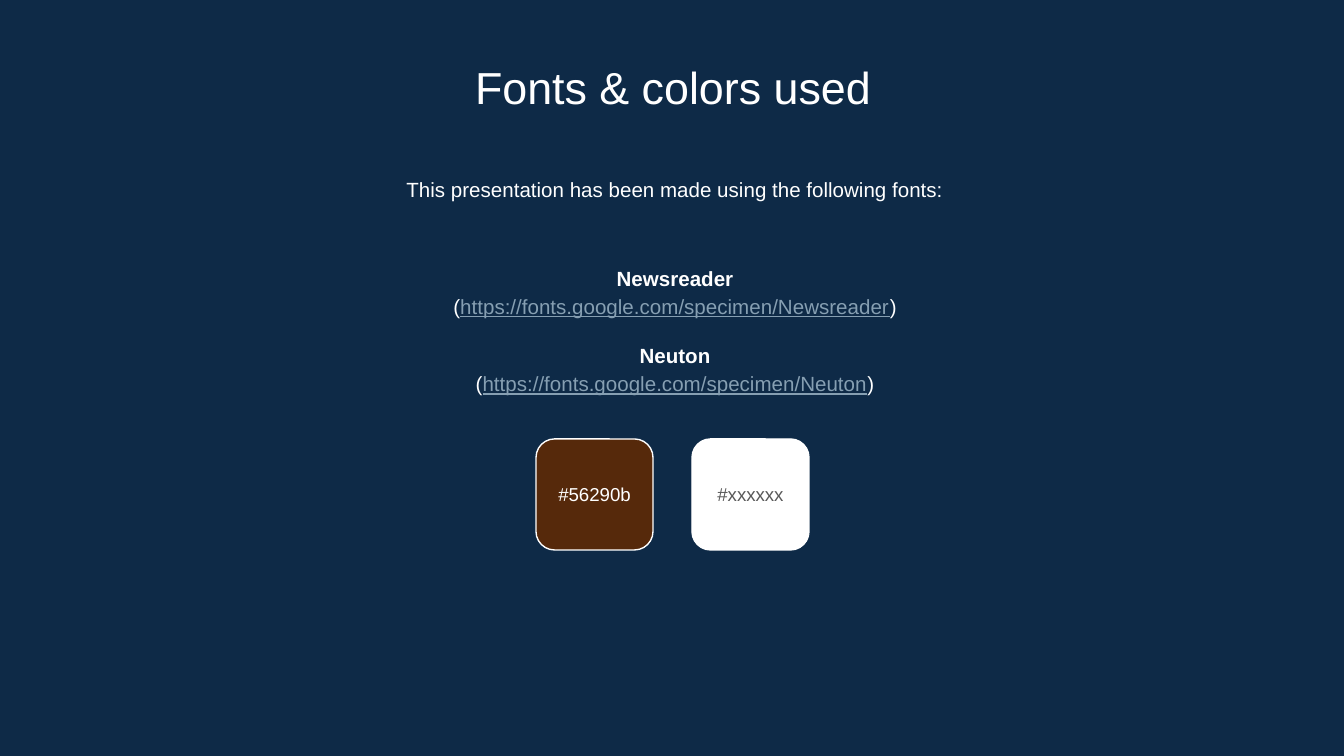
from typing import NamedTuple

from pptx import Presentation
from pptx.dml.color import RGBColor
from pptx.enum.shapes import MSO_SHAPE
from pptx.enum.text import MSO_ANCHOR, PP_ALIGN
from pptx.util import Emu, Pt

EMU_PER_PX = 914400 / 134.4
FONT = "Arial"
NAVY, WHITE, LINK, GREY, BROWN = "0E2A47", "FFFFFF", "869FB2", "595959", "56290B"


class Box(NamedTuple):
    left: int
    top: int
    width: int
    height: int


class Typeface(NamedTuple):
    name: str
    url: str


class Swatch(NamedTuple):
    label: str
    fill: str
    text_color: str


TITLE_BOX = Box(155, 47, 1036, 71)
INTRO_BOX = Box(157, 160, 1036, 65)
TYPEFACES_BOX = Box(157, 237, 1036, 184)
FIRST_SWATCH = Box(536, 439, 117, 111)
SWATCH_PITCH = 156
INSET = 13

TYPEFACES = [
    Typeface("Newsreader", "https://fonts.google.com/specimen/Newsreader"),
    Typeface("Neuton", "https://fonts.google.com/specimen/Neuton"),
]
SWATCHES = [Swatch("#56290b", BROWN, WHITE), Swatch("#xxxxxx", WHITE, GREY)]


def px(length: int) -> Emu:
    return Emu(round(length * EMU_PER_PX))


def rgb(color: str) -> RGBColor:
    return RGBColor.from_string(color)


def prepare_frame(frame, anchor) -> None:
    frame.word_wrap = True
    frame.vertical_anchor = anchor
    frame.margin_left = frame.margin_right = px(INSET)
    frame.margin_top = frame.margin_bottom = px(INSET)


def add_frame(slide, box: Box, anchor=MSO_ANCHOR.TOP):
    frame = slide.shapes.add_textbox(*map(px, box)).text_frame
    prepare_frame(frame, anchor)
    return frame


def style(paragraph, size: int, color: str = WHITE, spacing: float = 1.0) -> None:
    paragraph.alignment = PP_ALIGN.CENTER
    paragraph.line_spacing = spacing
    paragraph.font.name = FONT
    paragraph.font.size = Pt(size)
    paragraph.font.color.rgb = rgb(color)


def add_typefaces(slide, typefaces: list[Typeface]) -> None:
    """List each typeface in bold with its address in brackets below."""
    frame = add_frame(slide, TYPEFACES_BOX, MSO_ANCHOR.MIDDLE)
    for index, typeface in enumerate(typefaces):
        name = frame.add_paragraph() if index else frame.paragraphs[0]
        name.text = typeface.name
        style(name, 11, spacing=1.15)
        name.font.bold = True
        if index:
            name.space_before = Pt(11)

        address = frame.add_paragraph()
        style(address, 11, spacing=1.15)
        for text in ("(", typeface.url, ")"):
            run = address.add_run()
            run.text = text
            if text == typeface.url:
                run.font.underline = True
                run.font.color.rgb = rgb(LINK)


def add_swatch(slide, box: Box, swatch: Swatch) -> None:
    tile = slide.shapes.add_shape(MSO_SHAPE.ROUNDED_RECTANGLE, *map(px, box))
    tile.shadow.inherit = False
    tile.fill.solid()
    tile.fill.fore_color.rgb = rgb(swatch.fill)
    tile.line.color.rgb = rgb(WHITE)
    tile.line.width = Pt(0.75)
    prepare_frame(tile.text_frame, MSO_ANCHOR.MIDDLE)
    # The corner radius already insets the text.
    tile.text_frame.margin_left = tile.text_frame.margin_right = 0
    label = tile.text_frame.paragraphs[0]
    label.text = swatch.label
    style(label, 10, swatch.text_color)


def main() -> None:
    presentation = Presentation()
    presentation.slide_width, presentation.slide_height = px(1344), px(756)
    slide = presentation.slides.add_slide(presentation.slide_layouts[6])
    slide.background.fill.solid()
    slide.background.fill.fore_color.rgb = rgb(NAVY)

    title = add_frame(slide, TITLE_BOX).paragraphs[0]
    title.text = "Fonts & colors used"
    style(title, 24)

    intro = add_frame(slide, INTRO_BOX).paragraphs[0]
    intro.text = "This presentation has been made using the following fonts:"
    style(intro, 11, spacing=1.15)

    add_typefaces(slide, TYPEFACES)
    for index, swatch in enumerate(SWATCHES):
        left = FIRST_SWATCH.left + index * SWATCH_PITCH
        add_swatch(slide, FIRST_SWATCH._replace(left=left), swatch)

    presentation.save("out.pptx")


if __name__ == "__main__":
    main()
